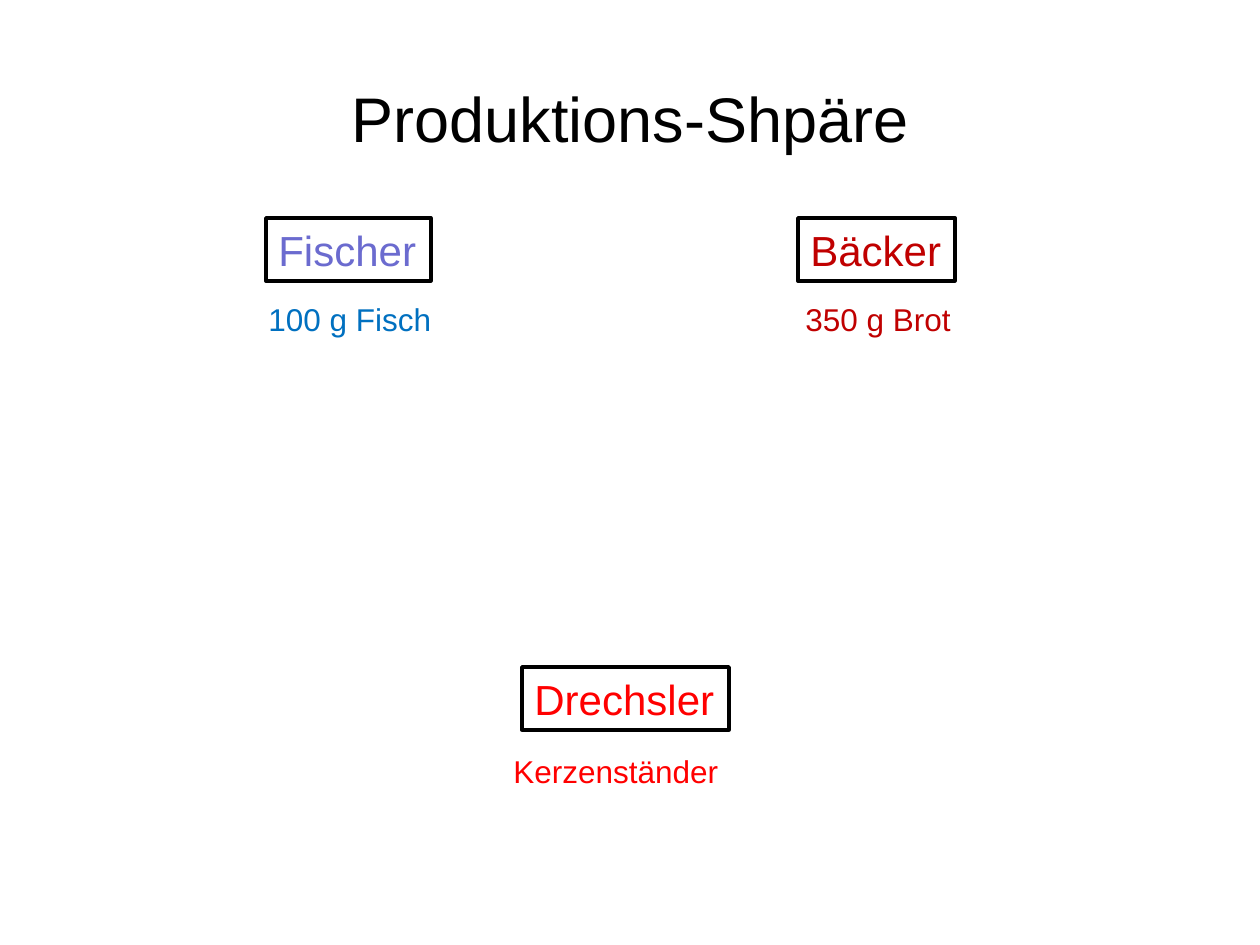
import dataclasses

import pptx
import pptx.dml.color
import pptx.enum.shapes
import pptx.enum.text
import pptx.util

PX = 914400 // 126
FONT = "Arial"
BLACK = "000000"
WHITE = "FFFFFF"
BOX_HEIGHT = 63
LABEL_HEIGHT = 50


@dataclasses.dataclass
class Producer:
    name: str
    name_color: str
    left: int
    top: int
    width: int
    product: str
    product_color: str
    product_left: int
    product_top: int
    product_width: int


PRODUCERS = [
    Producer("Fischer", "6B6BCF", 266, 218, 165, "100 g Fisch", "0070C0", 256, 294, 190),
    Producer("Bäcker", "C00000", 798, 218, 157, "350 g Brot", "C00000", 793, 294, 173),
    Producer("Drechsler", "FF0000", 522, 667, 207, "Kerzenständer", "FF0000", 501, 746, 232),
]


def px(n: int) -> pptx.util.Emu:
    return pptx.util.Emu(n * PX)


def rgb(color: str) -> pptx.dml.color.RGBColor:
    return pptx.dml.color.RGBColor.from_string(color)


def set_text(sp, text: str, size: int, color: str, align) -> None:
    tf = sp.text_frame
    tf.text = text
    p = tf.paragraphs[0]
    p.alignment = align
    font = p.runs[0].font
    font.name = FONT
    font.size = pptx.util.Pt(size)
    font.color.rgb = rgb(color)


def fit_to_text(sp) -> None:
    sp.text_frame.word_wrap = False
    sp.text_frame.auto_size = pptx.enum.text.MSO_AUTO_SIZE.SHAPE_TO_FIT_TEXT
    sp.text_frame.vertical_anchor = pptx.enum.text.MSO_ANCHOR.TOP


def add_producer(s, producer: Producer) -> None:
    left_align = pptx.enum.text.PP_ALIGN.LEFT
    box = s.shapes.add_shape(
        pptx.enum.shapes.MSO_SHAPE.RECTANGLE,
        px(producer.left), px(producer.top), px(producer.width), px(BOX_HEIGHT),
    )
    box.shadow.inherit = False
    box.fill.solid()
    box.fill.fore_color.rgb = rgb(WHITE)
    box.line.color.rgb = rgb(BLACK)
    box.line.width = pptx.util.Pt(2)
    set_text(box, producer.name, 24, producer.name_color, left_align)
    fit_to_text(box)

    label = s.shapes.add_textbox(
        px(producer.product_left), px(producer.product_top),
        px(producer.product_width), px(LABEL_HEIGHT),
    )
    set_text(label, producer.product, 18, producer.product_color, left_align)
    fit_to_text(label)


def add_title(s, text: str) -> None:
    title = s.shapes.title
    title.left, title.top = px(63), px(38)
    title.width, title.height = px(1134), px(158)
    set_text(title, text, 36, BLACK, pptx.enum.text.PP_ALIGN.CENTER)
    title.text_frame.vertical_anchor = pptx.enum.text.MSO_ANCHOR.MIDDLE


def main() -> None:
    prs = pptx.Presentation()
    prs.slide_width, prs.slide_height = px(1260), px(945)
    s = prs.slides.add_slide(prs.slide_layouts[5])
    add_title(s, "Produktions-Shpäre")
    for producer in PRODUCERS:
        add_producer(s, producer)
    prs.save("out.pptx")


if __name__ == "__main__":
    main()
